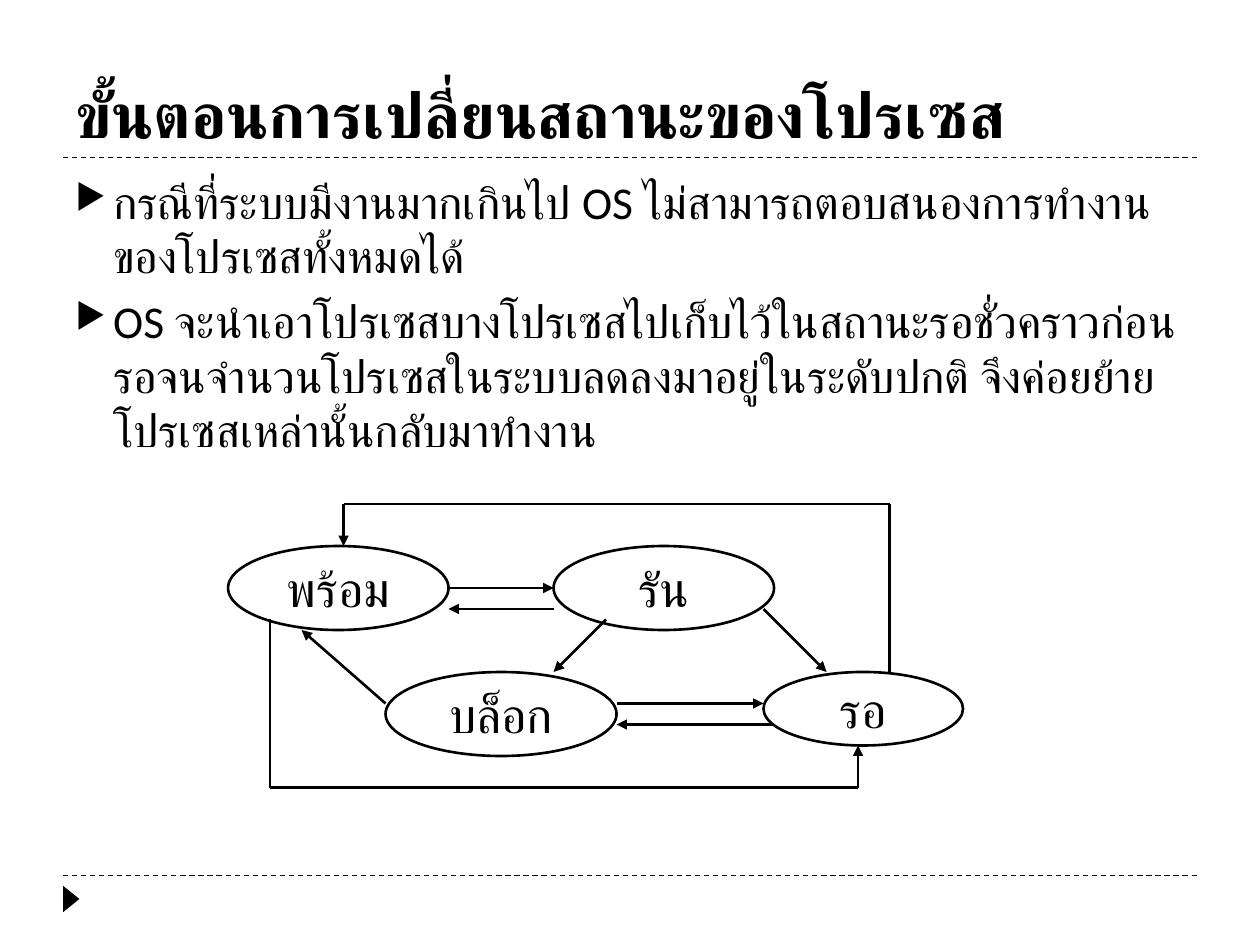
"""Build a slide on process state changes, with its state diagram."""
from lxml import etree
from pptx import Presentation
from pptx.dml.color import RGBColor
from pptx.enum.dml import MSO_LINE
from pptx.enum.lang import MSO_LANGUAGE_ID
from pptx.enum.shapes import MSO_CONNECTOR, MSO_SHAPE
from pptx.enum.text import MSO_ANCHOR, PP_ALIGN
from pptx.oxml.ns import qn
from pptx.util import Inches, Pt

BLACK = RGBColor(0, 0, 0)
WHITE = RGBColor(255, 255, 255)
DASH = MSO_LINE.DASH
THAI = MSO_LANGUAGE_ID.THAI
LINE = MSO_CONNECTOR.STRAIGHT
OVAL, WEDGE = MSO_SHAPE.OVAL, MSO_SHAPE.ISOSCELES_TRIANGLE
TOP, MIDDLE, BOTTOM = MSO_ANCHOR.TOP, MSO_ANCHOR.MIDDLE, MSO_ANCHOR.BOTTOM
LEFT, CENTER = PP_ALIGN.LEFT, PP_ALIGN.CENTER

deck = Presentation()
deck.slide_width, deck.slide_height = Inches(10), Inches(7.5)
slide = deck.slides.add_slide(deck.slide_layouts[6])
shapes = slide.shapes
CELL = Inches(1) / 12
EDGE = Inches(0.06)


def write(box, *lines, size, bold=False, align=LEFT, anchor=TOP, wrap=True, bullet=None):
    frame = box.text_frame
    frame.word_wrap, frame.vertical_anchor = wrap, anchor
    for i, line in enumerate(lines):
        para = frame.add_paragraph() if i else frame.paragraphs[0]
        para.alignment = align
        run = para.add_run()
        run.text = line
        font = run.font
        font.name, font.size, font.bold = "Calibri", Pt(size), bold
        font.color.rgb, font.language_id = BLACK, THAI
        if bullet:
            para.space_before = Pt(6)
            props = para._p.get_or_add_pPr()
            props.set("marL", str(Inches(0.3)))
            props.set("indent", str(-Inches(0.3)))
            etree.SubElement(props, qn("a:buSzPct"), val="76000")
            etree.SubElement(props, qn("a:buChar"), char=bullet)


def join(start, end, width=1.5, dash=None, arrow=False):
    link = shapes.add_connector(LINE, *map(int, start + end))
    link.line.color.rgb, link.line.width = BLACK, Pt(width)
    if dash:
        link.line.dash_style = dash
    if arrow:
        etree.SubElement(link.line._get_or_add_ln(), qn("a:tailEnd"), type="triangle")
    etree.SubElement(link._element.spPr, qn("a:effectLst"))


for y in (6.95, 1.25):
    join((Inches(0.5), Inches(y)), (Inches(9.5), Inches(y)), width=0.75, dash=DASH)

mark = shapes.add_shape(WEDGE, Inches(0.46), Inches(7.07), Inches(0.21), Inches(0.13))
mark.rotation = 90
mark.shadow.inherit = False
mark.fill.solid()
mark.fill.fore_color.rgb = BLACK
mark.line.fill.background()

title = shapes.add_textbox(Inches(0.5), Inches(0.17), Inches(9), Inches(1.08))
write(title, "ขั้นตอนการเปลี่ยนสถานะของโปรเซส", size=36, bold=True, anchor=BOTTOM)
body = shapes.add_textbox(Inches(0.5), Inches(1.33), Inches(9), Inches(5.4))
write(
    body,
    "กรณีที่ระบบมีงานมากเกินไป OS ไม่สามารถตอบสนองการทำงานของโปรเซสทั้งหมดได้",
    "OS จะนำเอาโปรเซสบางโปรเซสไปเก็บไว้ในสถานะรอชั่วคราวก่อน "
    "รอจนจำนวนโปรเซสในระบบลดลงมาอยู่ในระดับปกติ จึงค่อยย้ายโปรเซสเหล่านั้นกลับมาทำงาน",
    size=26, bullet="▶",
)

STATES = [
    ("รัน", 52, 52, 21, 8),
    ("พร้อม", 21, 52, 21, 8),
    ("รอ", 72, 64, 19, 7),
    ("บล็อก", 36, 64, 22, 8),
]
for name, col, row, wide, high in STATES:
    state = shapes.add_shape(
        OVAL, int(EDGE + col * CELL), int(row * CELL), int(wide * CELL), int(high * CELL)
    )
    state.shadow.inherit = False
    state.fill.solid()
    state.fill.fore_color.rgb = WHITE
    state.line.color.rgb, state.line.width = BLACK, Pt(1.5)
    write(state, name, size=28, align=CENTER, anchor=MIDDLE, wrap=False)

ROUTES = [
    [(42, 56), (52, 56)],
    [(52, 58), (42, 58)],
    [(58, 67), (72, 67)],
    [(73, 69), (58, 69)],
    [(72, 58), (78, 64)],
    [(36, 67), (28, 60)],
    [(57, 59), (52, 64)],
    [(84, 64), (84, 48), (32, 48), (32, 52)],
    [(25, 59), (25, 75), (81, 75), (81, 71)],
]
for route in ROUTES:
    spots = [(EDGE + col * CELL, row * CELL) for col, row in route]
    for start, end in zip(spots, spots[1:]):
        join(start, end, arrow=end == spots[-1])

deck.save("out.pptx")
